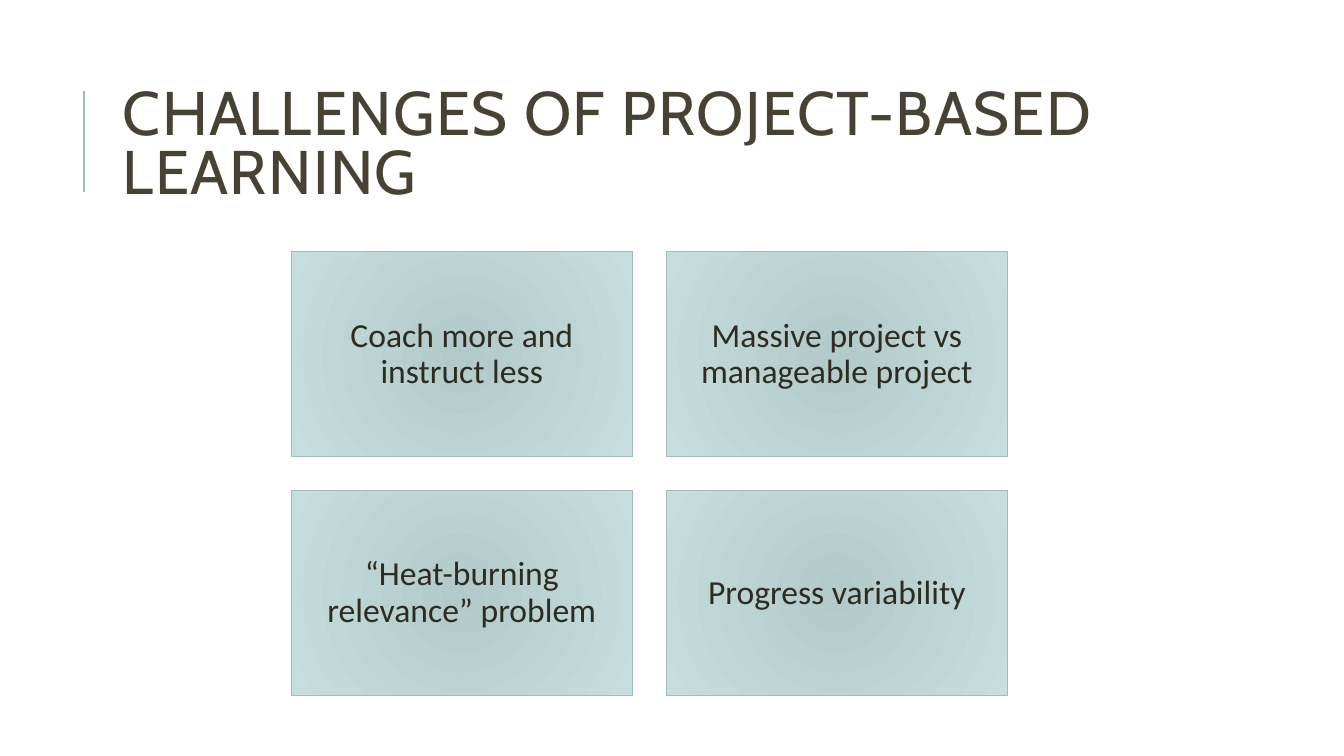
from dataclasses import dataclass

from pptx import Presentation
from pptx.dml.color import RGBColor as RGB
from pptx.enum.shapes import MSO_CONNECTOR as CONN, MSO_SHAPE as SHAPE
from pptx.enum.text import MSO_ANCHOR as ANCHOR, PP_ALIGN as ALIGN
from pptx.oxml import parse_xml
from pptx.oxml.ns import nsdecls, qn
from pptx.shapes.autoshape import Shape
from pptx.slide import Slide
from pptx.text.text import TextFrame
from pptx.util import Inches, Pt


@dataclass(frozen=True)
class TextStyle:
    font: str
    size: int
    color: RGB
    align: ALIGN
    line_spacing: float
    tracking: int = 0  # hundredths of a point


@dataclass(frozen=True)
class Theme:
    accent: RGB = RGB(0x9C, 0xBE, 0xBD)
    card_center: RGB = RGB(0xB2, 0xCB, 0xCA)
    card_edge: RGB = RGB(0xC6, 0xDE, 0xDE)
    title: TextStyle = TextStyle("Cabin", 44, RGB(0x47, 0x42, 0x33), ALIGN.LEFT, 0.8, 100)
    card: TextStyle = TextStyle("Calibri", 24, RGB(0x2E, 0x2B, 0x21), ALIGN.CENTER, 0.9)


@dataclass(frozen=True)
class Grid:
    left: float
    top: float
    width: float
    height: float
    gap: float
    columns: int

    def cell(self, index: int) -> tuple[float, float]:
        row, col = divmod(index, self.columns)
        return (self.left + col * (self.width + self.gap),
                self.top + row * (self.height + self.gap))


THEME = Theme()
CARD_GRID = Grid(left=2.89, top=2.5, width=3.38, height=2.03, gap=0.34, columns=2)
CHALLENGES = (
    "Coach more and instruct less",
    "Massive project vs manageable project",
    "“Heat-burning relevance” problem",
    "Progress variability",
)


def write_text(tf: TextFrame, text: str, style: TextStyle) -> None:
    tf.word_wrap = True
    tf.vertical_anchor = ANCHOR.MIDDLE
    p = tf.paragraphs[0]
    p.alignment = style.align
    p.line_spacing = style.line_spacing
    r = p.add_run()
    r.text = text
    r.font.name = style.font
    r.font.size = Pt(style.size)
    r.font.color.rgb = style.color
    if style.tracking:
        r.font._element.set("spc", str(style.tracking))


def fill_radial(sp: Shape, center: RGB, edge: RGB) -> None:
    """Fill with a circular gradient that runs from the middle outwards."""
    sp.fill.gradient()
    for stop, color, position in zip(sp.fill.gradient_stops, (center, edge), (0, 1)):
        stop.color.rgb = color
        stop.position = position
    grad = sp._element.spPr.find(qn("a:gradFill"))
    grad.replace(grad.find(qn("a:lin")), parse_xml(
        f'<a:path {nsdecls("a")} path="circle">'
        '<a:fillToRect l="50000" t="50000" r="50000" b="50000"/></a:path>'))


def add_title(slide: Slide, text: str) -> None:
    rule = slide.shapes.add_connector(
        CONN.STRAIGHT, Inches(0.83), Inches(1.9), Inches(0.83), Inches(0.9))
    rule.line.color.rgb = THEME.accent
    rule.line.width = Pt(1.5)
    rule._element.spPr.append(parse_xml(f'<a:effectLst {nsdecls("a")}/>'))
    box = slide.shapes.add_textbox(Inches(1.12), Inches(0.64), Inches(10.63), Inches(1.64))
    write_text(box.text_frame, text, THEME.title)


def add_card(slide: Slide, index: int, text: str) -> None:
    left, top = CARD_GRID.cell(index)
    sp = slide.shapes.add_shape(SHAPE.RECTANGLE, Inches(left), Inches(top),
                                Inches(CARD_GRID.width), Inches(CARD_GRID.height))
    sp.shadow.inherit = False
    fill_radial(sp, THEME.card_center, THEME.card_edge)
    sp.line.color.rgb = THEME.accent
    sp.line.width = Pt(0.75)
    tf = sp.text_frame
    tf.margin_left = tf.margin_top = tf.margin_right = tf.margin_bottom = Inches(0.1)
    write_text(tf, text, THEME.card)


def main() -> None:
    prs = Presentation()
    prs.slide_width, prs.slide_height = Inches(13.33), Inches(7.5)
    slide = prs.slides.add_slide(prs.slide_layouts[6])
    add_title(slide, "CHALLENGES OF PROJECT-BASED LEARNING")
    for index, challenge in enumerate(CHALLENGES):
        add_card(slide, index, challenge)
    prs.save("out.pptx")


if __name__ == "__main__":
    main()
